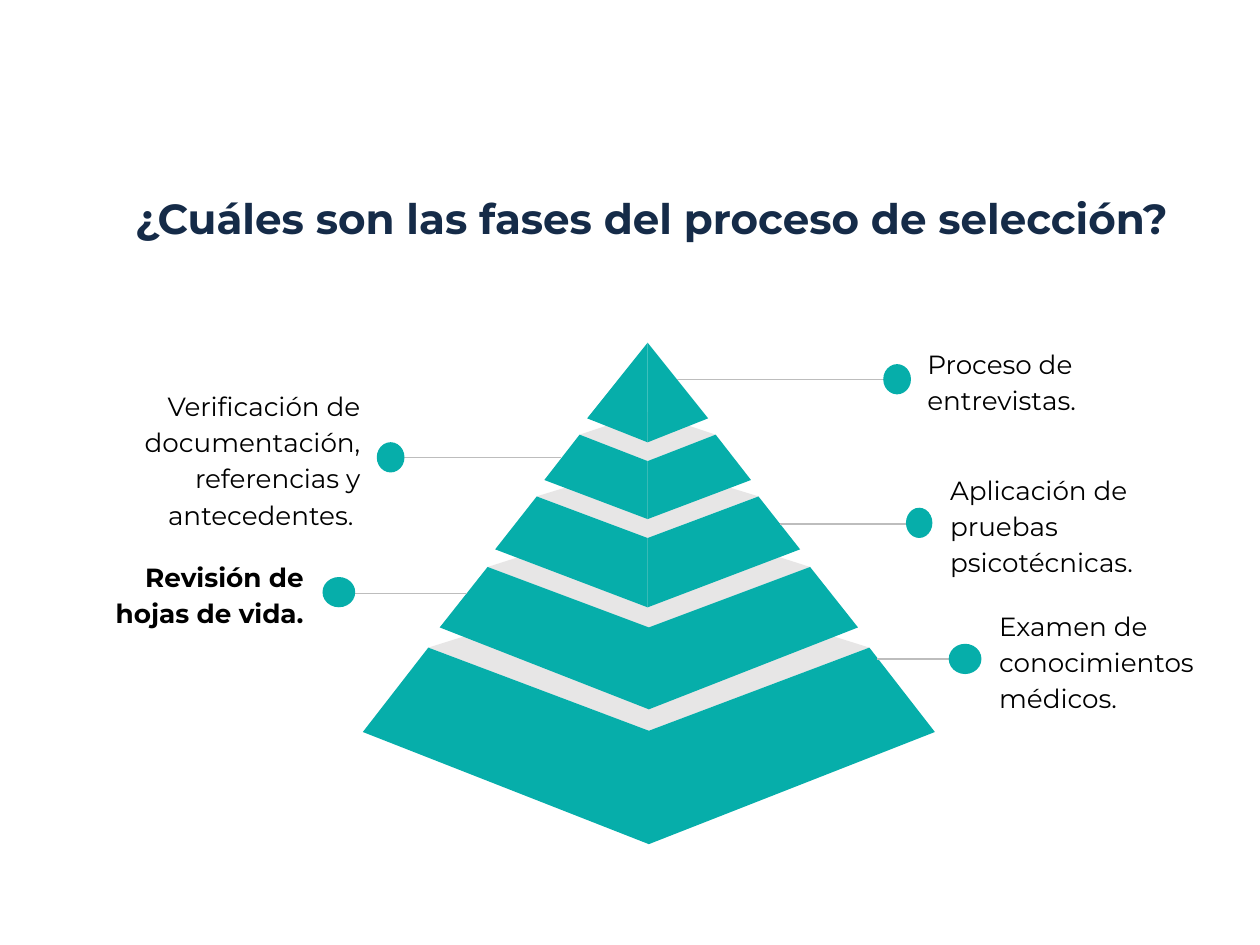
from dataclasses import dataclass

from pptx import Presentation
from pptx.dml.color import RGBColor
from pptx.enum.shapes import MSO_CONNECTOR as Connector, MSO_SHAPE as Shape
from pptx.enum.text import MSO_ANCHOR as Anchor, PP_ALIGN as Align
from pptx.oxml.ns import qn
from pptx.util import Inches, Pt
from lxml.etree import SubElement


@dataclass(frozen=True)
class Theme:
    font: str = "Montserrat"
    title_size: float = 24
    label_size: float = 15
    title: str = "152B48"
    text: str = "000000"
    face: str = "06AEAA"
    cap: str = "E7E6E6"
    line: str = "BDBDBD"


@dataclass(frozen=True)
class Tier:
    """A pyramid slice: half widths, and heights at its sides and front edge."""
    center: float
    top_half: float
    top_side: float
    top_front: float
    bottom_half: float
    bottom_side: float
    bottom_front: float
    cap_back: float | None = None


@dataclass(frozen=True)
class Callout:
    text: str
    box: tuple[float, float, float, float]
    dot: tuple[float, float, float, float]
    line_start: float
    line_end: float
    line_y: float
    align: Align = Align.LEFT
    bold: bool = False


THEME = Theme()

# Tiers from the base to the tip, so that each one covers the cap below it
TIERS = [
    Tier(5.15, 1.75, 5.14, 5.8, 2.27, 5.81, 6.7, 4.59),
    Tier(5.15, 1.28, 4.5, 4.98, 1.66, 4.98, 5.63, 4.09),
    Tier(5.14, 0.88, 3.94, 4.27, 1.21, 4.36, 4.82, 3.67),
    Tier(5.14, 0.54, 3.45, 3.66, 0.82, 3.81, 4.12, 3.27),
    Tier(5.14, 0, 2.72, 2.72, 0.48, 3.32, 3.51),
]

CALLOUTS = [
    Callout("Revisión de hojas de vida.", (0.59, 4.25, 1.95, 0.91),
            (2.56, 4.58, 0.26, 0.24), 3.71, 2.61, 4.71, Align.RIGHT, True),
    Callout("Aplicación de pruebas psicotécnicas.", (7.41, 3.7, 2.48, 0.91),
            (7.19, 4.03, 0.21, 0.24), 6.19, 7.37, 4.16),
    Callout("Proceso de entrevistas.", (7.23, 2.56, 2.35, 0.91),
            (7.01, 2.89, 0.22, 0.24), 5.37, 7.19, 3.01),
    Callout("Verificación de documentación, referencias y antecedentes. ",
            (0.22, 3.18, 2.77, 0.91), (2.99, 3.51, 0.22, 0.24),
            4.45, 3.04, 3.63, Align.RIGHT),
    Callout("Examen de conocimientos médicos.", (7.8, 4.78, 2.67, 0.91),
            (7.53, 5.11, 0.26, 0.24), 6.96, 7.75, 5.23),
]


def paint(shape, color: str) -> None:
    shape.shadow.inherit = False
    shape.fill.solid()
    shape.fill.fore_color.rgb = RGBColor.from_string(color)
    shape.line.fill.background()


def add_text(slide, text: str, box: tuple, *, size: float, color: str,
             align: Align, bold: bool = False, spacing: float = 1.0,
             after: float = 0, margins: tuple = (0.13, 0.13)) -> None:
    frame = slide.shapes.add_textbox(*map(Inches, box)).text_frame
    frame.word_wrap = True
    frame.vertical_anchor = Anchor.MIDDLE
    frame.margin_left = frame.margin_right = Inches(margins[0])
    frame.margin_top = frame.margin_bottom = Inches(margins[1])
    paragraph = frame.paragraphs[0]
    paragraph.alignment = align
    paragraph.line_spacing = spacing
    paragraph.space_after = Pt(after)
    run = paragraph.add_run()
    run.text = text
    run.font.name = THEME.font
    run.font.size = Pt(size)
    run.font.bold = bold
    run.font.color.rgb = RGBColor.from_string(color)


def add_polygon(slide, points: list[tuple[float, float]], color: str) -> None:
    start, *rest = [(Inches(x), Inches(y)) for x, y in points]
    builder = slide.shapes.build_freeform(*start)
    builder.add_line_segments(rest, close=True)
    paint(builder.convert_to_shape(), color)


def add_tier(slide, tier: Tier) -> None:
    center = tier.center
    if tier.cap_back is not None:
        add_polygon(slide, [(center - tier.top_half, tier.top_side),
                            (center, tier.top_front),
                            (center + tier.top_half, tier.top_side),
                            (center, tier.cap_back)], THEME.cap)
    for side in (-1, 1):
        add_polygon(slide, [(center + side * tier.top_half, tier.top_side),
                            (center, tier.top_front),
                            (center, tier.bottom_front),
                            (center + side * tier.bottom_half, tier.bottom_side)],
                    THEME.face)


def add_callout(slide, callout: Callout) -> None:
    y = Inches(callout.line_y)
    line = slide.shapes.add_connector(
        Connector.STRAIGHT, Inches(callout.line_start), y, Inches(callout.line_end), y)
    line.line.color.rgb = RGBColor.from_string(THEME.line)
    line.line.width = Pt(0.75)
    SubElement(line._element.spPr, qn("a:effectLst"))
    add_text(slide, callout.text, callout.box, size=THEME.label_size,
             color=THEME.text, align=callout.align, bold=callout.bold,
             spacing=1.15, after=21)
    paint(slide.shapes.add_shape(Shape.OVAL, *map(Inches, callout.dot)), THEME.face)


def main() -> None:
    presentation = Presentation()
    presentation.slide_width, presentation.slide_height = Inches(10), Inches(7.5)
    slide = presentation.slides.add_slide(presentation.slide_layouts[6])

    # Title
    add_text(slide, "¿Cuáles son las fases del proceso de selección?",
             (-0.58, 1.09, 11.5, 1.33), size=THEME.title_size, color=THEME.title,
             align=Align.CENTER, bold=True, spacing=0.9, margins=(0.1, 0.05))

    # Pyramid
    for tier in TIERS:
        add_tier(slide, tier)

    # Labels with leader lines
    for callout in CALLOUTS:
        add_callout(slide, callout)

    presentation.save("out.pptx")


if __name__ == "__main__":
    main()
